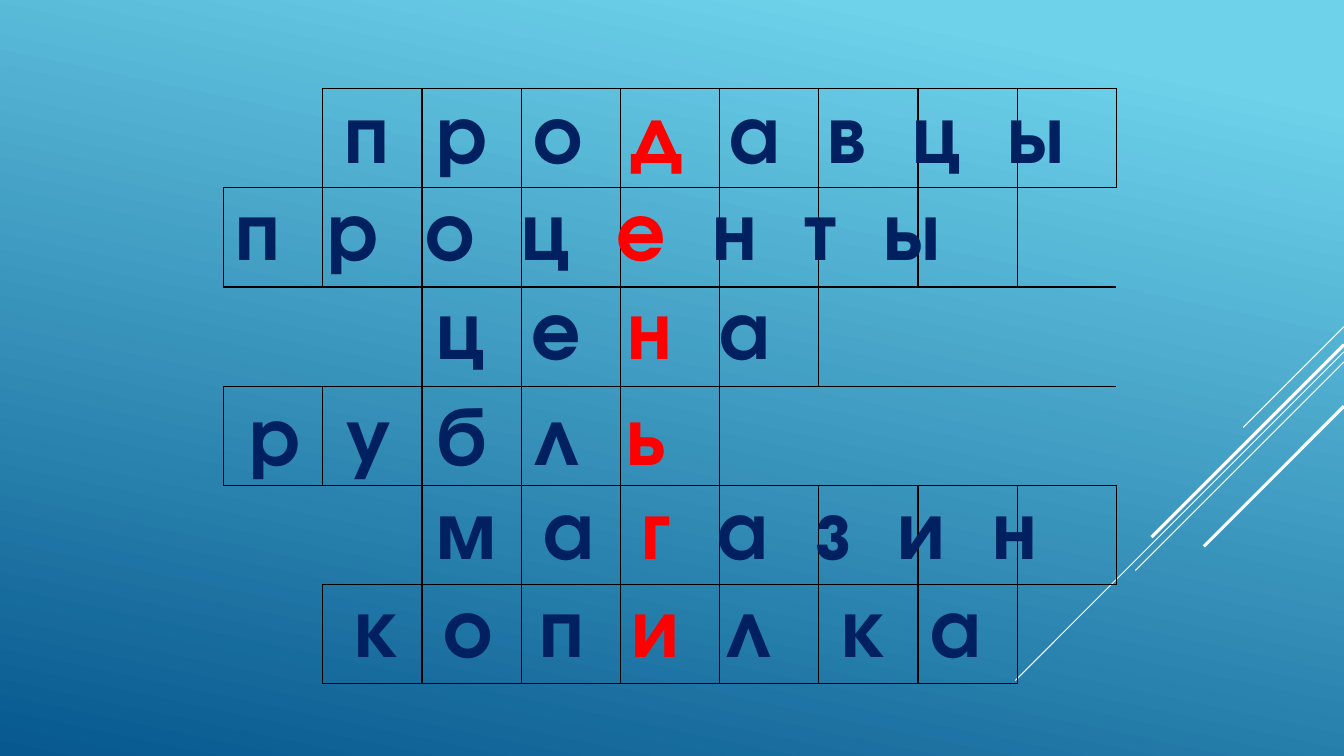
from lxml import etree
from pptx import Presentation
from pptx.dml.color import RGBColor
from pptx.enum import shapes, text
from pptx.oxml import ns
from pptx.util import Pt

SKY = RGBColor(0x6E, 0xD2, 0xEB)
DEEP_BLUE = RGBColor(0x06, 0x58, 0x8E)
WHITE = RGBColor(0xFF, 0xFF, 0xFF)
NAVY = RGBColor(0x00, 0x20, 0x60)
RED = RGBColor(0xFF, 0x00, 0x00)
BLACK = RGBColor(0x00, 0x00, 0x00)

LETTER = {"name": "TeX Gyre Adventor", "size": Pt(60), "bold": True}
SPACE = 16.8  # width of one space at the letter size
ROWS, COLUMNS = 6, 9
SIDES = {"l": "a:lnL", "r": "a:lnR", "t": "a:lnT", "b": "a:lnB"}

# Cells outside the words: (row, first column, last column): bordered sides
BLANKS = {
    (0, 0, 0): "rb",
    (1, 8, 8): "lt",
    (2, 0, 1): "trb",
    (2, 6, 8): "lt",
    (3, 5, 8): "ltb",
    (4, 0, 1): "tr",
    (5, 0, 0): "r",
    (5, 8, 8): "lt",
}

# Left and top within the board, width, then (letters, colour, spaces after each)
ANSWERS = [
    (79.3, -10, 570, [("про", NAVY, 2), ("д", RED, 2), ("авцы", NAVY, 2)]),
    (1.6, 59.1, 571, [("проц", NAVY, 2), ("е", RED, 2), ("нты", NAVY, 2)]),
    (144.9, 129.7, 281.5, [("це", NAVY, 2), ("н", RED, 2), ("а", NAVY, 2)]),
    (11.7, 206, 345.6, [("рубл", NAVY, 2), ("ь", RED, 2)]),
    (144.9, 272.9, 571, [("ма", NAVY, 2), ("г", RED, 2), ("азин", NAVY, 2)]),
    (86.5, 342.8, 485.3,
     [("коп", NAVY, 2), ("и", RED, 2), ("л", NAVY, 3), ("ка", NAVY, 2)]),
]

# Drop from the top of the corner, length along each axis, weight
RAYS = [(0, 72, 0.75), (18, 234.7, 0.75), (25.2, 149, 0.75),
        (12.9, 137.5, 2.25), (56.9, 100.1, 2.25)]


def paint_background(slide):
    fill = slide.background.fill
    fill.gradient()
    fill.gradient_angle = 258
    for stop, (position, colour) in zip(fill.gradient_stops, [(0.1, SKY), (1, DEEP_BLUE)]):
        stop.position = position
        stop.color.rgb = colour


def draw_rays(slide, right, top):
    """Diagonal rays running down and left from the right edge."""
    for drop, length, weight in RAYS:
        y = top + drop
        ray = slide.shapes.add_connector(
            shapes.MSO_CONNECTOR.STRAIGHT,
            Pt(right), Pt(y), Pt(right - length), Pt(y + length))
        ray.line.color.rgb = WHITE
        ray.line.width = Pt(weight)
        etree.SubElement(ray._element.spPr, ns.qn("a:effectLst"))


def set_borders(cell, sides):
    properties = cell._tc.get_or_add_tcPr()
    for side, tag in SIDES.items():
        border = etree.SubElement(properties, ns.qn(tag), w=str(Pt(1)))
        if side in sides:
            solid = etree.SubElement(border, ns.qn("a:solidFill"))
            etree.SubElement(solid, ns.qn("a:srgbClr"), val=str(BLACK))
        else:
            etree.SubElement(border, ns.qn("a:noFill"))


def draw_grid(slide, left, top, width, height):
    grid = slide.shapes.add_table(
        ROWS, COLUMNS, Pt(left), Pt(top), Pt(width), Pt(height)).table
    grid.first_row = grid.horz_banding = False
    for column in grid.columns:
        column.width = Pt(width / COLUMNS)
    for row in grid.rows:
        row.height = Pt(height / ROWS)

    # Borders follow the words; blank stretches keep only some sides
    borders = {}
    for (row, first, last), sides in BLANKS.items():
        for column in range(first, last + 1):
            borders[row, column] = sides if column == first else sides.strip("lr")
        if last > first:
            grid.cell(row, first).merge(grid.cell(row, last))
    for row in range(ROWS):
        for column in range(COLUMNS):
            cell = grid.cell(row, column)
            set_borders(cell, borders.get((row, column), "lrtb"))
            cell.fill.background()


def write_answer(slide, left, top, width, parts):
    answer = slide.shapes.add_textbox(Pt(left), Pt(top), Pt(width), Pt(79.9)).text_frame
    answer.word_wrap = True
    answer.auto_size = text.MSO_AUTO_SIZE.SHAPE_TO_FIT_TEXT
    for letters, colour, spaces in parts:
        run = answer.paragraphs[0].add_run()
        run.text = letters
        for name, value in LETTER.items():
            setattr(run.font, name, value)
        run.font.color.rgb = colour
        run._r.get_or_add_rPr().set("spc", str(round(spaces * SPACE * 100)))


def draw_crossword(slide, left, top, width, height):
    draw_grid(slide, left, top, width, height)
    for x, y, answer_width, parts in ANSWERS:
        write_answer(slide, left + x, top + y, answer_width, parts)


def main():
    deck = Presentation()
    deck.slide_width, deck.slide_height = Pt(960), Pt(540)
    slide = deck.slides.add_slide(deck.slide_layouts[6])
    paint_background(slide)
    draw_rays(slide, 960, 233.3)
    draw_crossword(slide, 159.7, 63.3, 637.9, 425.3)
    deck.save("out.pptx")


if __name__ == "__main__":
    main()
